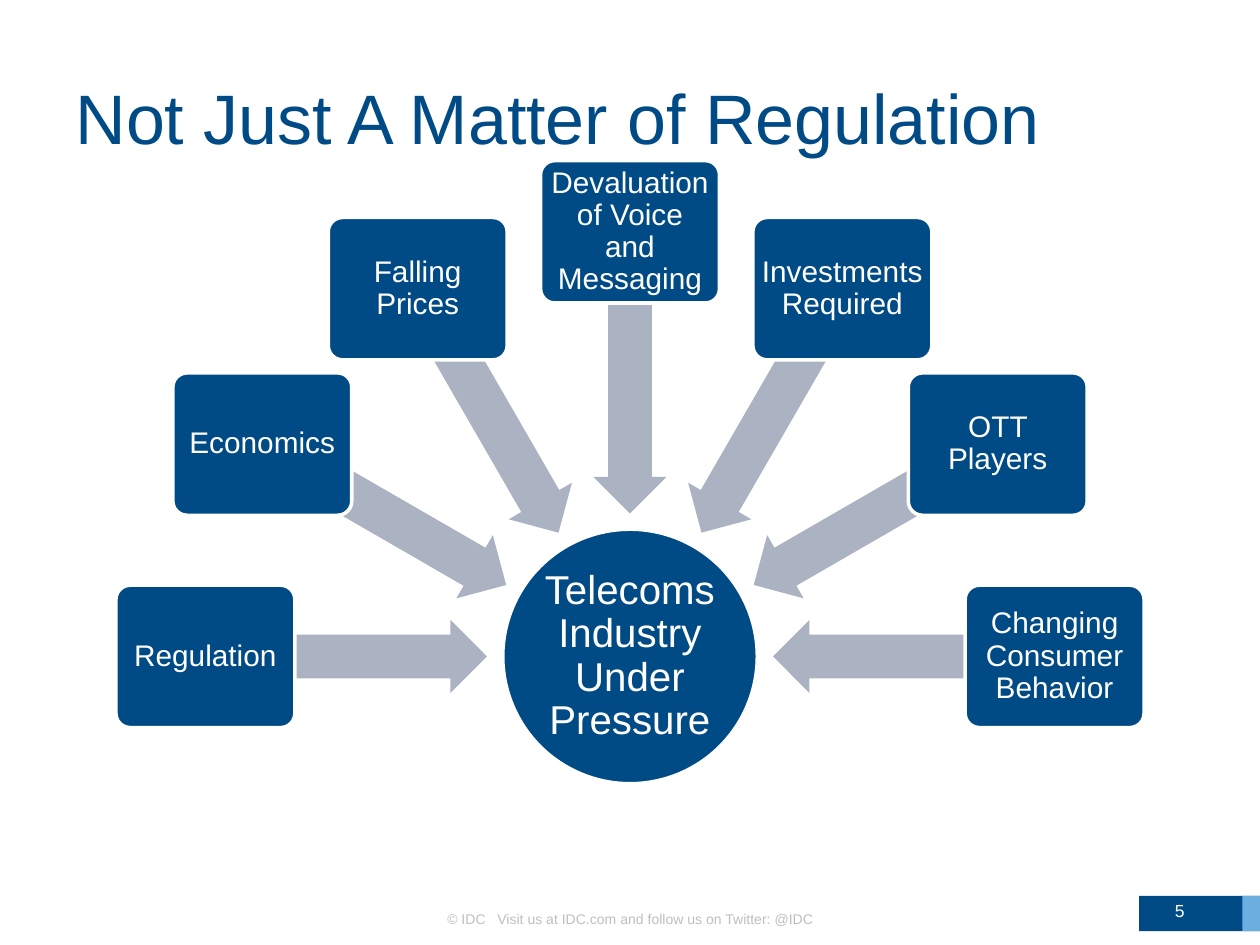
import math

import pptx
import pptx.util
import pptx.dml.color
import pptx.enum.shapes
import pptx.enum.text

Inches = pptx.util.Inches
SHAPES = pptx.enum.shapes.MSO_SHAPE
ALIGN = pptx.enum.text.PP_ALIGN
COLORS = {"navy": "004B85", "sky": "6CAEDF", "arrow": "ABB2C2",
          "footer": "BFBFBF", "white": "FFFFFF"}


def add_filled(page, kind, center_x, center_y, width, height, fill, outlined=False):
    """Add a preset shape around its center."""
    shape = page.shapes.add_shape(
        kind, Inches(center_x - width / 2), Inches(center_y - height / 2),
        Inches(width), Inches(height))
    shape.shadow.inherit = False
    shape.fill.solid()
    shape.fill.fore_color.rgb = pptx.dml.color.RGBColor.from_string(COLORS[fill])
    if outlined:
        shape.line.color.rgb = pptx.dml.color.RGBColor.from_string(COLORS["white"])
        shape.line.width = pptx.util.Pt(2)
    else:
        shape.line.fill.background()
    return shape


def write_text(shape, text, size, color, align, inset=None, spacing=None):
    """Fill a shape with one middle-anchored, formatted paragraph."""
    frame = shape.text_frame
    frame.text = text
    frame.word_wrap = True
    frame.auto_size = pptx.enum.text.MSO_AUTO_SIZE.NONE
    frame.vertical_anchor = pptx.enum.text.MSO_ANCHOR.MIDDLE
    if inset is not None:
        frame.margin_left = frame.margin_right = Inches(inset)
        frame.margin_top = frame.margin_bottom = Inches(inset)
    para = frame.paragraphs[0]
    para.alignment = align
    para.line_spacing = spacing
    for span in para.runs:
        span.font.name = "Arial"
        span.font.size = pptx.util.Pt(size)
        span.font.color.rgb = pptx.dml.color.RGBColor.from_string(COLORS[color])


deck = pptx.Presentation()
deck.slide_width, deck.slide_height = Inches(10), Inches(7.5)
page = deck.slides.add_slide(deck.slide_layouts[5])

# Title
title = page.shapes.title
title.left, title.top = Inches(0.5), Inches(0.3)
title.width, title.height = Inches(9), Inches(1.25)
write_text(title, "Not Just A Matter of Regulation", 40, "navy", ALIGN.LEFT)

# Footer band, credit line and page number
add_filled(page, SHAPES.RECTANGLE, 9.52, 7.25, 0.96, 0.28, "navy")
add_filled(page, SHAPES.RECTANGLE, 9.93, 7.25, 0.14, 0.28, "sky")
footers = [
    (2.58, 7.09, 4.85, "© IDC   Visit us at IDC.com and follow us on Twitter: @IDC",
     8, "footer", ALIGN.CENTER),
    (7.17, 7.03, 2.33, "5", 10, "white", ALIGN.RIGHT),
]
for left, top, width, text, size, color, align in footers:
    box = page.shapes.add_textbox(Inches(left), Inches(top), Inches(width), Inches(0.4))
    write_text(box, text, size, color, align)

# Hub of the diagram
hub_x, hub_y = 5, 5.21
hub = add_filled(page, SHAPES.OVAL, hub_x, hub_y, 2.02, 2.02, "navy", outlined=True)
write_text(hub, "Telecoms Industry Under Pressure", 23, "white", ALIGN.CENTER, 0.02, 0.9)

# Pressures spread evenly over the half circle, each with an arrow to the hub
pressures = ["Regulation", "Economics", "Falling Prices",
             "Devaluation of Voice and Messaging", "Investments Required",
             "OTT Players", "Changing Consumer Behavior"]
box_radius, arrow_radius = 3.37, 2.25
step = 180 / (len(pressures) - 1)
for index, pressure in enumerate(pressures):
    angle = 180 + index * step
    across, down = math.cos(math.radians(angle)), math.sin(math.radians(angle))
    arrow = add_filled(page, SHAPES.LEFT_ARROW, hub_x + arrow_radius * across,
                       hub_y + arrow_radius * down, 2.23, 0.58, "arrow")
    arrow.adjustments[0], arrow.adjustments[1] = 0.6, 0.5
    arrow.rotation = angle % 360
    box = add_filled(page, SHAPES.ROUNDED_RECTANGLE, hub_x + box_radius * across,
                     hub_y + box_radius * down, 1.42, 1.13, "navy", outlined=True)
    box.adjustments[0] = 0.1
    # The narrow inset keeps the longest word on one line
    write_text(box, pressure, 17, "white", ALIGN.CENTER, 0.03, 0.9)

deck.save("out.pptx")
